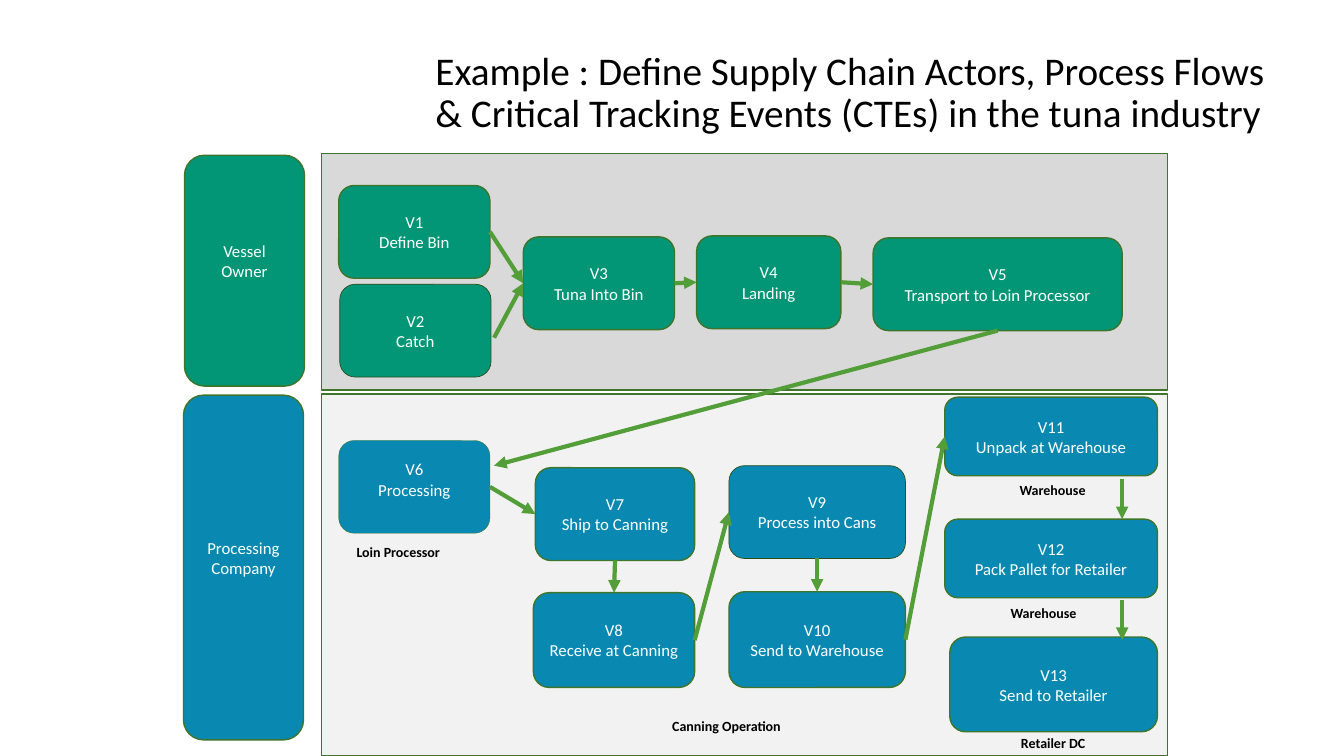
from dataclasses import dataclass

from lxml import etree
from pptx import Presentation
from pptx import util as u
from pptx.dml import color
from pptx.enum import shapes, text
from pptx.oxml import ns

FONT = "Calibri"
GREEN, BLUE, ARROW = "029676", "0989B1", "549E39"
EDGE, DARK_EDGE, V6_EDGE = "3E752A", "2A4F1C", "3F762B"
BLACK, WHITE = "000000", "FFFFFF"
TOP, LEFT, BOTTOM, RIGHT = range(4)


@dataclass
class Box:
    name: str
    lines: list[str]
    at: tuple[float, float, float, float]
    fill: str
    edge: str = EDGE
    weight: float = 1
    bottom_inset: float = 0.05


@dataclass
class Label:
    words: str
    at: tuple[float, float, float, float]
    wrap: bool = True


@dataclass
class Arrow:
    # Each end is a (box name, side) joint or a free (x, y) point
    start: tuple
    end: tuple


# Lane backgrounds
LANES = [
    Box("Processing lane", [], (3.19, 3.91, 8.39, 3.59), "F2F2F2"),
    Box("Vessel lane", [], (3.19, 1.52, 8.39, 2.35), "D9D9D9"),
]

# Actors, then events
BOXES = [
    Box("Vessel Owner", ["Vessel Owner"], (1.83, 1.54, 1.19, 2.29), GREEN, bottom_inset=0.25),
    Box("Processing Company", ["Processing", "Company"], (1.82, 3.92, 1.19, 3.42), BLUE,
        bottom_inset=0.25),
    Box("V1", ["V1", "Define Bin"], (3.36, 1.84, 1.5, 0.92), GREEN),
    Box("V2", ["V2", "Catch"], (3.37, 2.82, 1.5, 0.92), GREEN, DARK_EDGE, 0.5),
    Box("V3", ["V3", "Tuna Into Bin"], (5.19, 2.35, 1.5, 0.92), GREEN),
    Box("V4", ["V4", "Landing"], (6.91, 2.34, 1.43, 0.92), GREEN),
    Box("V5", ["V5", "Transport to Loin Processor"], (8.66, 2.36, 2.47, 0.92), GREEN),
    Box("V6", ["V6", "Processing"], (3.36, 4.37, 1.5, 0.92), BLUE, V6_EDGE, 0.25, 0.2),
    Box("V7", ["V7", "Ship to Canning"], (5.31, 4.64, 1.58, 0.92), BLUE),
    Box("V8", ["V8", "Receive at Canning"], (5.29, 5.88, 1.6, 0.94), BLUE),
    Box("V9", ["V9", "Process into Cans"], (7.23, 4.62, 1.75, 0.92), BLUE, DARK_EDGE, 0.5),
    Box("V10", ["V10", "Send to Warehouse"], (7.23, 5.87, 1.75, 0.95), BLUE),
    Box("V11", ["V11", "Unpack at Warehouse"], (9.37, 3.94, 2.11, 0.78), BLUE),
    Box("V12", ["V12", "Pack Pallet for Retailer"], (9.37, 5.15, 2.11, 0.78), BLUE),
    Box("V13", ["V13", "Send to Retailer"], (9.42, 6.32, 2.06, 0.94), BLUE),
]

ARROWS = [
    Arrow(("V1", RIGHT), ("V3", LEFT)),
    Arrow((4.9, 3.35), ("V3", LEFT)),
    Arrow(("V3", RIGHT), ("V4", LEFT)),
    Arrow(("V4", RIGHT), ("V5", LEFT)),
    Arrow(("V5", BOTTOM), (4.9, 4.62)),
    Arrow(("V6", RIGHT), ("V7", LEFT)),
    Arrow(("V7", BOTTOM), ("V8", TOP)),
    Arrow(("V8", RIGHT), ("V9", LEFT)),
    Arrow(("V9", BOTTOM), ("V10", TOP)),
    Arrow(("V10", RIGHT), ("V11", LEFT)),
    Arrow((11.13, 4.75), (11.13, 5.15)),
    Arrow((11.13, 5.95), (11.13, 6.35)),
]

LABELS = [
    Label("Loin Processor", (3.43, 5.34, 1.04, 0.27), False),
    Label("Canning Operation", (5.78, 7.07, 2.85, 0.27)),
    Label("Retailer DC", (10.02, 7.24, 0.85, 0.25), False),
    Label("Warehouse", (9.46, 4.73, 1.96, 0.27)),
    Label("Warehouse", (9.37, 5.95, 1.96, 0.27)),
]


def rgb(value: str) -> color.RGBColor:
    return color.RGBColor.from_string(value)


def inches(values: tuple) -> list:
    return [u.Inches(v) for v in values]


def write(sp, lines: list[str], size: float, ink: str, para: dict, frame: dict,
          bold: bool = False) -> None:
    tf = sp.text_frame
    for key, value in frame.items():
        setattr(tf, key, value)
    for i, line in enumerate(lines):
        p = tf.paragraphs[0] if i == 0 else tf.add_paragraph()
        for key, value in para.items():
            setattr(p, key, value)
        r = p.add_run()
        r.text = line
        for key, value in {"name": FONT, "size": u.Pt(size), "bold": bold}.items():
            setattr(r.font, key, value)
        r.font.color.rgb = rgb(ink)


def draw_box(slide, box: Box, kind):
    sp = slide.shapes.add_shape(kind, *inches(box.at))
    sp.shadow.inherit = False
    sp.fill.solid()
    sp.fill.fore_color.rgb = rgb(box.fill)
    sp.line.color.rgb = rgb(box.edge)
    sp.line.width = u.Pt(box.weight)
    write(sp, box.lines, 12, WHITE, {"alignment": text.PP_ALIGN.CENTER},
          {"word_wrap": True, "vertical_anchor": text.MSO_ANCHOR.MIDDLE,
           "margin_bottom": u.Inches(box.bottom_inset)})
    return sp


def draw_arrow(slide, arrow: Arrow, boxes: dict) -> None:
    joined = [isinstance(end[0], str) for end in (arrow.start, arrow.end)]
    points = [(0, 0) if j else end for j, end in zip(joined, (arrow.start, arrow.end))]
    line = slide.shapes.add_connector(shapes.MSO_CONNECTOR.STRAIGHT,
                                      *inches(points[0] + points[1]))
    if joined[0]:
        line.begin_connect(boxes[arrow.start[0]], arrow.start[1])
    if joined[1]:
        line.end_connect(boxes[arrow.end[0]], arrow.end[1])
    line.line.color.rgb = rgb(ARROW)
    line.line.width = u.Pt(3)
    sp_pr = line._element.spPr
    etree.SubElement(sp_pr.find(ns.qn("a:ln")), ns.qn("a:tailEnd"), type="triangle")
    etree.SubElement(sp_pr, ns.qn("a:effectLst"))


def draw_label(slide, label: Label) -> None:
    sp = slide.shapes.add_textbox(*inches(label.at))
    write(sp, [label.words], 10, BLACK, {"alignment": text.PP_ALIGN.CENTER},
          {"word_wrap": label.wrap}, bold=True)


def main() -> None:
    prs = Presentation()
    prs.slide_width, prs.slide_height = inches((13.33, 7.5))
    slide = prs.slides.add_slide(prs.slide_layouts[6])

    # Title
    title = slide.shapes.add_textbox(*inches((4.22, 0.4, 8.72, 1.06)))
    write(title, ["Example : Define Supply Chain Actors, Process Flows & Critical "
                  "Tracking Events (CTEs) in the tuna industry"], 28, BLACK,
          {"line_spacing": 0.9},
          {"word_wrap": True, "vertical_anchor": text.MSO_ANCHOR.MIDDLE})

    # Lanes, boxes, arrows and labels
    for lane in LANES:
        draw_box(slide, lane, shapes.MSO_SHAPE.RECTANGLE)
    boxes = {b.name: draw_box(slide, b, shapes.MSO_SHAPE.ROUNDED_RECTANGLE) for b in BOXES}
    for arrow in ARROWS:
        draw_arrow(slide, arrow, boxes)
    for label in LABELS:
        draw_label(slide, label)

    prs.save("out.pptx")


if __name__ == "__main__":
    main()
